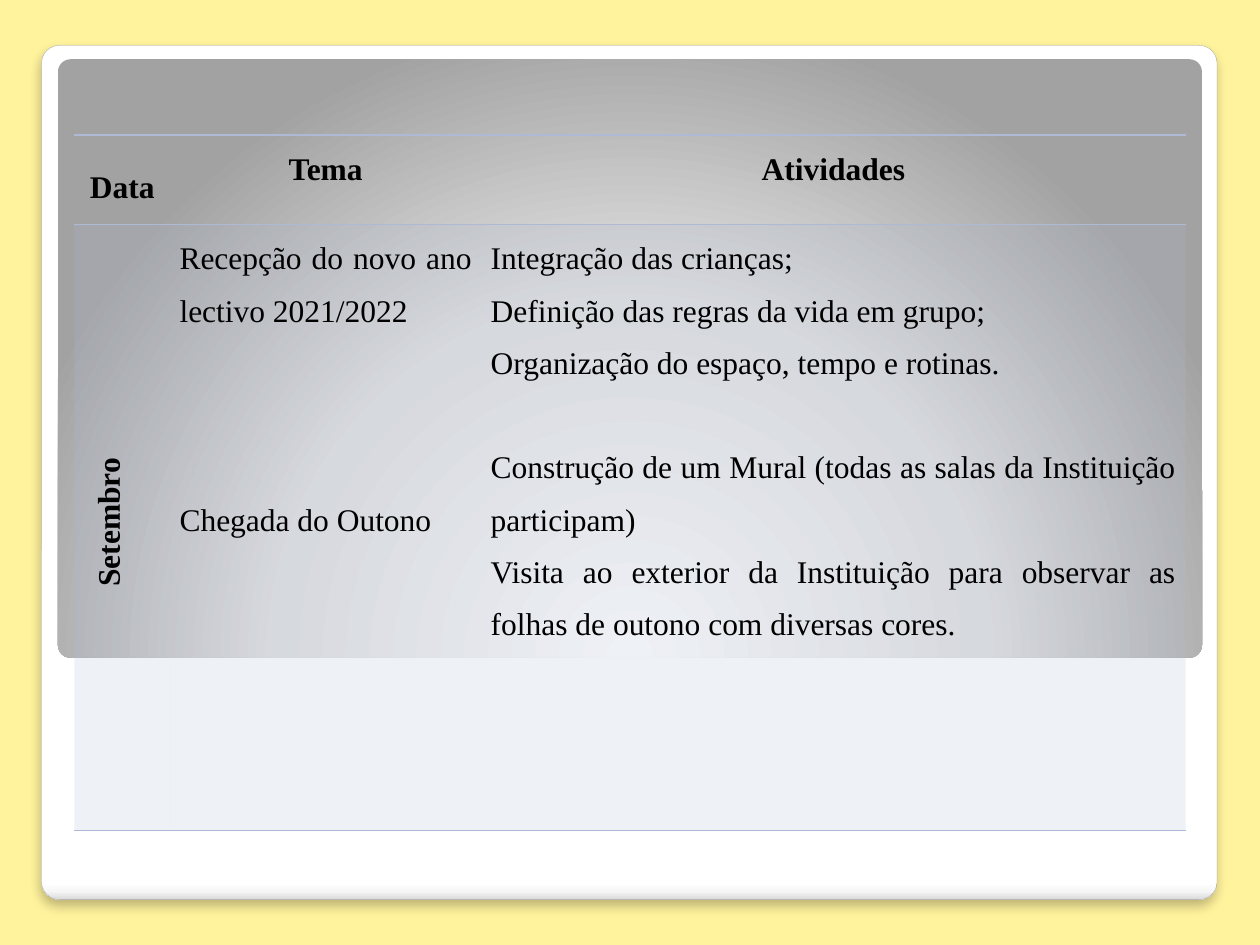
from dataclasses import dataclass

from lxml import etree
from pptx import Presentation
from pptx import util as u
from pptx.dml.color import RGBColor
from pptx.enum import shapes, text
from pptx.oxml import parse_xml
from pptx.oxml.ns import nsdecls, qn

YELLOW = RGBColor(0xFF, 0xF3, 0x9D)
WHITE = RGBColor(0xFF, 0xFF, 0xFF)
SNOW = RGBColor(0xF7, 0xF7, 0xF7)
SILVER = RGBColor(0xDA, 0xDA, 0xDA)
PALE = RGBColor(0xE1, 0xE1, 0xE1)
GREY = RGBColor(0xA2, 0xA2, 0xA2)
EDGE = RGBColor(0xA4, 0xA4, 0xA4)
BLUE = RGBColor(0xAE, 0xBA, 0xD5)
BLACK = RGBColor(0, 0, 0)

CENTER = text.PP_ALIGN.CENTER
JUSTIFY = text.PP_ALIGN.JUSTIFY
TOP = text.MSO_ANCHOR.TOP
MIDDLE = text.MSO_ANCHOR.MIDDLE
FONT = "Times New Roman"
LINE = 29.9
NO_STYLE = "{2D5ABB26-0587-4C30-8999-92F81FD0307C}"
LINEAR = '<a:lin {} ang="5400000" scaled="0"/>'
RADIAL = ('<a:path {} path="circle"><a:fillToRect l="50000" t="175000" '
          'r="50000" b="-75000"/></a:path>')


@dataclass
class Panel:
    left: float
    top: float
    width: float
    height: float
    stops: list[tuple[int, RGBColor]]
    direction: str


@dataclass
class Para:
    text: str
    gap: int = 0


@dataclass
class CellText:
    paras: list[Para]
    align: text.PP_ALIGN = CENTER
    anchor: text.MSO_ANCHOR = TOP
    bold: bool = True
    upright: bool = False


PANELS = [
    Panel(23.76, 25.92, 671.76, 488.16,
          [(0, WHITE), (98, WHITE), (99, SNOW), (100, SILVER)], LINEAR),
    Panel(33.12, 33.84, 653.76, 342,
          [(0, WHITE), (55, PALE), (100, GREY)], RADIAL),
]
COLS = [54.72, 177.84, 402.48]
ROWS = [51.12, 346.32]
CELLS = [
    [
        CellText([Para("Data")], anchor=MIDDLE),
        CellText([Para("Tema")]),
        CellText([Para("Atividades")]),
    ],
    [
        CellText([Para("Setembro")], anchor=MIDDLE, upright=True),
        CellText([
            Para("Recepção do novo ano lectivo 2021/2022"),
            Para("Chegada do Outono", gap=3),
        ], JUSTIFY, bold=False),
        CellText([
            Para("Integração das crianças;"),
            Para("Definição das regras da vida em grupo;"),
            Para("Organização do espaço, tempo e rotinas."),
            Para("Construção de um Mural (todas as salas da Instituição participam)", gap=1),
            Para("Visita ao exterior da Instituição para observar as folhas de outono "
                 "com diversas cores."),
        ], JUSTIFY, bold=False),
    ],
]


def add_panel(s, panel: Panel):
    sp = s.shapes.add_shape(
        shapes.MSO_SHAPE.ROUNDED_RECTANGLE, u.Pt(panel.left), u.Pt(panel.top),
        u.Pt(panel.width), u.Pt(panel.height))
    sp.adjustments[0] = 0.021
    sp.shadow.inherit = False
    sp.line.fill.background()
    sp.fill.gradient()
    grad = sp._element.spPr.find(qn("a:gradFill"))
    for child in list(grad):
        grad.remove(child)
    stops = etree.SubElement(grad, qn("a:gsLst"))
    for pos, color in panel.stops:
        gs = etree.SubElement(stops, qn("a:gs"), pos=str(pos * 1000))
        etree.SubElement(gs, qn("a:srgbClr"), val=str(color))
    grad.append(parse_xml(panel.direction.format(nsdecls("a"))))
    return sp


def add_shadow(sp) -> None:
    effects = sp._element.spPr.find(qn("a:effectLst"))
    effects.append(parse_xml(
        f'<a:outerShdw {nsdecls("a")} blurRad="{u.Pt(6)}" dist="{u.Pt(4)}" '
        f'dir="5400000" algn="t" rotWithShape="0"><a:srgbClr val="{BLACK}">'
        '<a:alpha val="25000"/></a:srgbClr></a:outerShdw>'))


def add_borders(cell, sides: list[str]) -> None:
    props = cell._tc.get_or_add_tcPr()
    for i, side in enumerate(sides):
        props.insert(i, parse_xml(
            f'<a:{side} {nsdecls("a")} w="{u.Pt(1)}"><a:solidFill>'
            f'<a:srgbClr val="{BLUE}"/></a:solidFill></a:{side}>'))


def fill_cell(cell, content: CellText) -> None:
    cell.margin_left = cell.margin_right = u.Pt(5.4)
    cell.margin_top = cell.margin_bottom = 0
    cell.vertical_anchor = content.anchor
    tf = cell.text_frame
    for i, para in enumerate(content.paras):
        p = tf.paragraphs[0] if i == 0 else tf.add_paragraph()
        p.text = para.text
        p.alignment = content.align
        p.line_spacing = 1.5
        p.space_before = u.Pt(para.gap * LINE)
        p.font.name = FONT
        p.font.size = u.Pt(18)
        p.font.bold = content.bold
        p.font.color.rgb = BLACK
        if content.upright:
            p._p.get_or_add_pPr().set("marL", str(u.Pt(5.76)))
    if content.upright:
        cell._tc.get_or_add_tcPr().set("vert", "vert270")


def shade_cell(cell, shaded: bool) -> None:
    if not shaded:
        cell.fill.background()
        return
    cell.fill.solid()
    cell.fill.fore_color.rgb = BLUE
    color = cell._tc.tcPr.find(".//" + qn("a:srgbClr"))
    etree.SubElement(color, qn("a:alpha"), val="20000")


def add_plan(s) -> None:
    frame = s.shapes.add_table(
        len(ROWS), len(COLS), u.Pt(42.48), u.Pt(77.04), u.Pt(sum(COLS)), u.Pt(sum(ROWS)))
    table = frame.table
    table.horz_banding = False
    table._tbl.tblPr.find(qn("a:tableStyleId")).text = NO_STYLE
    for col, width in zip(table.columns, COLS):
        col.width = u.Pt(width)
    for r, height in enumerate(ROWS):
        table.rows[r].height = u.Pt(height)
        for c, content in enumerate(CELLS[r]):
            cell = table.cell(r, c)
            fill_cell(cell, content)
            shade_cell(cell, r > 0)
            add_borders(cell, ["lnT", "lnB"])


def main() -> None:
    prs = Presentation()
    prs.slide_width, prs.slide_height = u.Pt(720), u.Pt(540)
    s = prs.slides.add_slide(prs.slide_layouts[6])
    s.background.fill.solid()
    s.background.fill.fore_color.rgb = YELLOW
    card, _ = [add_panel(s, panel) for panel in PANELS]
    card.line.color.rgb = EDGE
    card.line.width = u.Pt(0.16)
    add_shadow(card)
    add_plan(s)
    prs.save("out.pptx")


if __name__ == "__main__":
    main()
